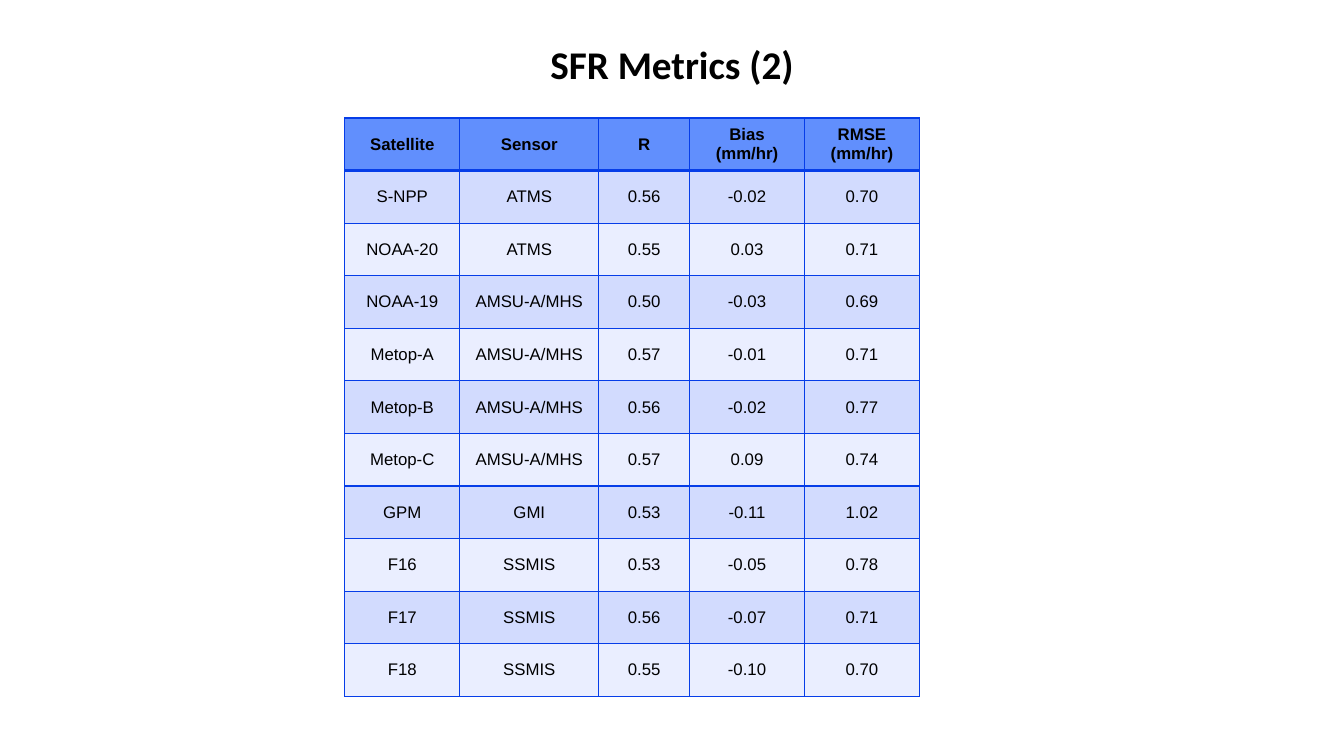
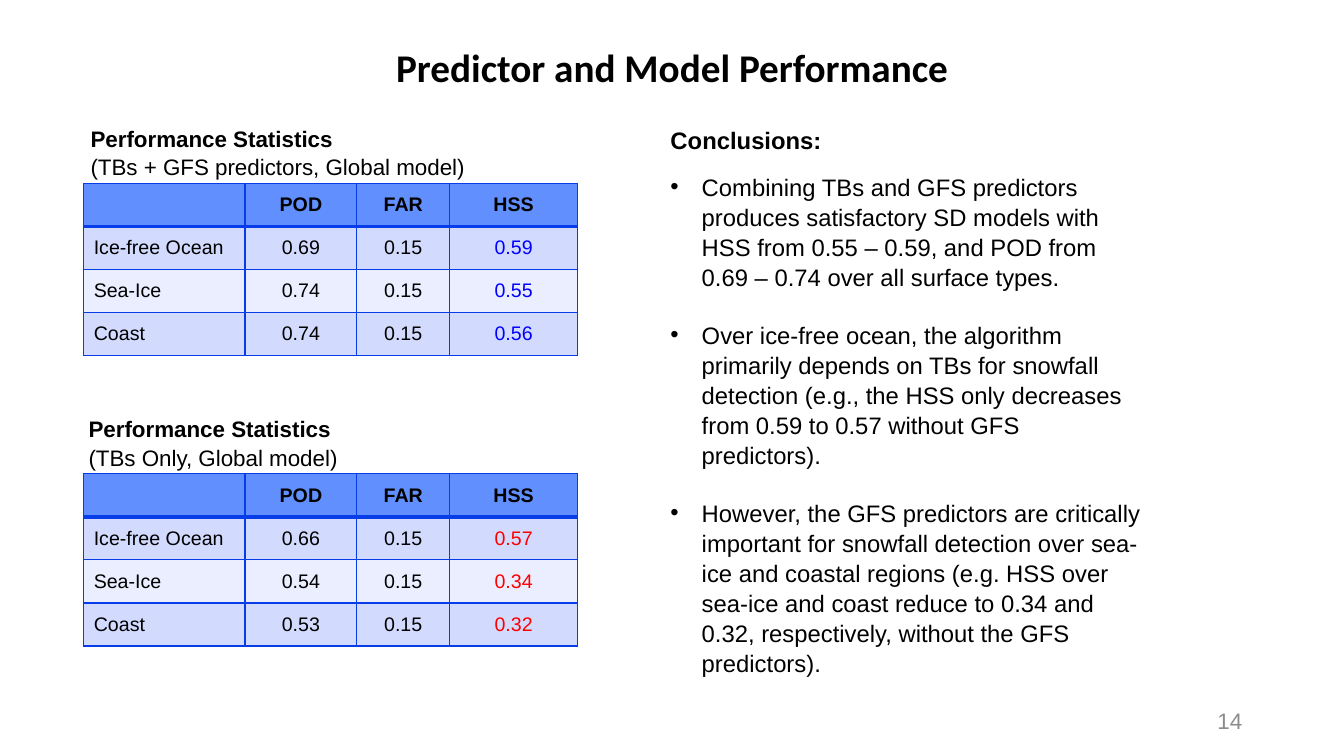
"""Build two slides on snowfall metrics and model performance."""
from dataclasses import dataclass

from lxml.etree import SubElement
from pptx import Presentation
from pptx.dml.color import RGBColor
from pptx.enum.text import MSO_ANCHOR as Anchor, MSO_AUTO_SIZE as AutoSize, PP_ALIGN as Align
from pptx.oxml.ns import qn
from pptx.slide import Slide
from pptx.text.text import TextFrame
from pptx.util import Pt

EMU_PER_PX = 9144
SLIDE_WIDTH, SLIDE_HEIGHT = 1333, 750
BLACK = RGBColor(0x00, 0x00, 0x00)
GRAY = RGBColor(0x8C, 0x8C, 0x8C)
BLUE = RGBColor(0x00, 0x00, 0xFF)
RED = RGBColor(0xFF, 0x00, 0x00)
BORDER = RGBColor(0x06, 0x3D, 0xE8)
HEADER_FILL = RGBColor(0x61, 0x8F, 0xFD)
ROW_FILLS = (RGBColor(0xD2, 0xDB, 0xFE), RGBColor(0xEA, 0xEE, 0xFF))
BODY_SPACING = 1.05
BULLET_INDENT = 31


@dataclass(frozen=True)
class Box:
    """Position and size in px."""
    left: int
    top: int
    width: int
    height: int

    def emu(self) -> tuple[int, ...]:
        return tuple(px(side) for side in (self.left, self.top, self.width, self.height))


@dataclass(frozen=True)
class Grid:
    """A table with a header row and banded body rows."""
    left: int
    top: int
    height: int
    columns: tuple[int, ...]
    rows: list[tuple[str, ...]]
    size: int
    first_align: Align = Align.CENTER
    last_color: RGBColor = BLACK


@dataclass(frozen=True)
class Statistics:
    """A captioned score table."""
    caption: Box
    predictors: str
    table_top: int
    scores: list[tuple[str, ...]]
    color: RGBColor


METRICS = Grid(342, 117, 574, (114, 138, 90, 114, 114), [
    ("Satellite", "Sensor", "R", "Bias\n(mm/hr)", "RMSE\n(mm/hr)"),
    ("S-NPP", "ATMS", "0.56", "-0.02", "0.70"),
    ("NOAA-20", "ATMS", "0.55", "0.03", "0.71"),
    ("NOAA-19", "AMSU-A/MHS", "0.50", "-0.03", "0.69"),
    ("Metop-A", "AMSU-A/MHS", "0.57", "-0.01", "0.71"),
    ("Metop-B", "AMSU-A/MHS", "0.56", "-0.02", "0.77"),
    ("Metop-C", "AMSU-A/MHS", "0.57", "0.09", "0.74"),
    ("GPM", "GMI", "0.53", "-0.11", "1.02"),
    ("F16", "SSMIS", "0.53", "-0.05", "0.78"),
    ("F17", "SSMIS", "0.56", "-0.07", "0.71"),
    ("F18", "SSMIS", "0.55", "-0.10", "0.70"),
], 12)

STATISTICS = (
    Statistics(Box(80, 118, 407, 64), "(TBs + GFS predictors, Global model)", 182, [
        ("Ice-free Ocean", "0.69", "0.15", "0.59"),
        ("Sea-Ice", "0.74", "0.15", "0.55"),
        ("Coast", "0.74", "0.15", "0.56"),
    ], BLUE),
    Statistics(Box(78, 406, 275, 64), "(TBs Only, Global model)", 470, [
        ("Ice-free Ocean", "0.66", "0.15", "0.57"),
        ("Sea-Ice", "0.54", "0.15", "0.34"),
        ("Coast", "0.53", "0.15", "0.32"),
    ], RED),
)

CONCLUSIONS = (
    "Combining TBs and GFS predictors produces satisfactory SD models with HSS from "
    "0.55 – 0.59, and POD from 0.69 – 0.74 over all surface types.",
    "Over ice-free ocean, the algorithm primarily depends on TBs for snowfall detection "
    "(e.g., the HSS only decreases from 0.59 to 0.57 without GFS predictors).",
    "However, the GFS predictors are critically important for snowfall detection over "
    "sea-ice and coastal regions (e.g. HSS over sea-ice and coast reduce to 0.34 and "
    "0.32, respectively, without the GFS predictors).",
)


def px(length: int) -> int:
    """Turn px into EMU."""
    return length * EMU_PER_PX


def write(frame: TextFrame, text: str, *, size: int, bold: bool = False,
          color: RGBColor = BLACK, font: str = "Arial", align: Align = Align.LEFT,
          spacing: float = 1.0, before: int = 0, after: int = 0, bullet: bool = False) -> None:
    """Add one formatted paragraph to a text frame."""
    paragraph = frame.add_paragraph() if frame.text else frame.paragraphs[0]
    properties = paragraph._p.get_or_add_pPr()
    indent = px(BULLET_INDENT) if bullet else 0
    properties.set("marL", str(indent))
    properties.set("indent", str(-indent))
    if bullet:
        SubElement(properties, qn("a:buFont"), typeface="Arial")
        SubElement(properties, qn("a:buChar"), char="•")
    else:
        SubElement(properties, qn("a:buNone"))
    paragraph.alignment = align
    paragraph.line_spacing = spacing
    paragraph.space_before = Pt(before)
    paragraph.space_after = Pt(after)
    run = paragraph.add_run()
    run.text = text
    run.font.name = font
    run.font.size = Pt(size)
    run.font.bold = bold
    run.font.color.rgb = color


def place(shape, box: Box, anchor: Anchor = Anchor.TOP) -> TextFrame:
    """Position a text shape and prepare its frame."""
    shape.left, shape.top, shape.width, shape.height = box.emu()
    frame = shape.text_frame
    frame.word_wrap = True
    frame.auto_size = AutoSize.NONE
    frame.vertical_anchor = anchor
    return frame


def add_text_frame(slide: Slide, box: Box, anchor: Anchor = Anchor.TOP) -> TextFrame:
    """Add a text box and return its frame."""
    return place(slide.shapes.add_textbox(*box.emu()), box, anchor)


def add_slide(presentation: Presentation, layout: int, title: str, top: int) -> Slide:
    """Add a slide with the shared title style."""
    slide = presentation.slides.add_slide(presentation.slide_layouts[layout])
    frame = place(slide.shapes.title, Box(0, top, SLIDE_WIDTH, 92), Anchor.BOTTOM)
    write(frame, title, size=28, bold=True, font="Calibri", align=Align.CENTER, spacing=0.85)
    return slide


def set_borders(cell, **widths: float) -> None:
    """Draw the cell borders, each given by its side and width in points."""
    properties = cell._tc.get_or_add_tcPr()
    for side, width in widths.items():
        line = SubElement(properties, qn(f"a:ln{side}"), w=str(Pt(width)))
        fill = SubElement(line, qn("a:solidFill"))
        SubElement(fill, qn("a:srgbClr"), val=str(BORDER))


def add_grid(slide: Slide, grid: Grid) -> None:
    """Add a banded table with a thick line below its header."""
    box = Box(grid.left, grid.top, sum(grid.columns), grid.height)
    table = slide.shapes.add_table(len(grid.rows), len(grid.columns), *box.emu()).table
    table.horz_banding = False
    for column, width in zip(table.columns, grid.columns):
        column.width = px(width)
    last = len(grid.columns) - 1
    for row_index, values in enumerate(grid.rows):
        table.rows[row_index].height = px(grid.height) // len(grid.rows)
        header = row_index == 0
        for column_index, value in enumerate(values):
            cell = table.cell(row_index, column_index)
            set_borders(cell, L=1, R=1, T=3 if row_index == 1 else 1, B=3 if header else 1)
            cell.fill.solid()
            cell.fill.fore_color.rgb = HEADER_FILL if header else ROW_FILLS[(row_index - 1) % 2]
            cell.vertical_anchor = Anchor.MIDDLE
            colored = column_index == last and not header
            for line in value.splitlines():
                write(cell.text_frame, line, size=grid.size, bold=header,
                      color=grid.last_color if colored else BLACK,
                      align=grid.first_align if column_index == 0 else Align.CENTER)


def add_statistics(slide: Slide, statistics: Statistics) -> None:
    """Add a caption and its score table."""
    caption = add_text_frame(slide, statistics.caption)
    write(caption, "Performance Statistics", size=16, bold=True, spacing=BODY_SPACING)
    write(caption, statistics.predictors, size=16, spacing=BODY_SPACING)
    rows = [("", "POD", "FAR", "HSS"), *statistics.scores]
    add_grid(slide, Grid(83, statistics.table_top, 171, (160, 111, 92, 127), rows, 14,
                         Align.LEFT, statistics.color))


def build_metrics(presentation: Presentation) -> None:
    """Build the satellite metrics slide."""
    add_grid(add_slide(presentation, 5, "SFR Metrics (2)", 0), METRICS)


def build_performance(presentation: Presentation) -> None:
    """Build the predictor and model performance slide."""
    slide = add_slide(presentation, 1, "Predictor and Model Performance", 3)
    for statistics in STATISTICS:
        add_statistics(slide, statistics)
    body = place(slide.placeholders[1], Box(655, 118, 489, 571))
    write(body, "Conclusions:", size=17, bold=True, spacing=BODY_SPACING, after=12)
    for index, conclusion in enumerate(CONCLUSIONS):
        write(body, conclusion, size=17, spacing=BODY_SPACING, bullet=True,
              before=20 if index else 0)
    number = add_text_frame(slide, Box(942, 695, 300, 40), Anchor.MIDDLE)
    write(number, "14", size=16, color=GRAY, align=Align.RIGHT)


def main() -> None:
    """Create and save the presentation."""
    presentation = Presentation()
    presentation.slide_width = px(SLIDE_WIDTH)
    presentation.slide_height = px(SLIDE_HEIGHT)
    build_metrics(presentation)
    build_performance(presentation)
    presentation.save("out.pptx")


if __name__ == "__main__":
    main()
